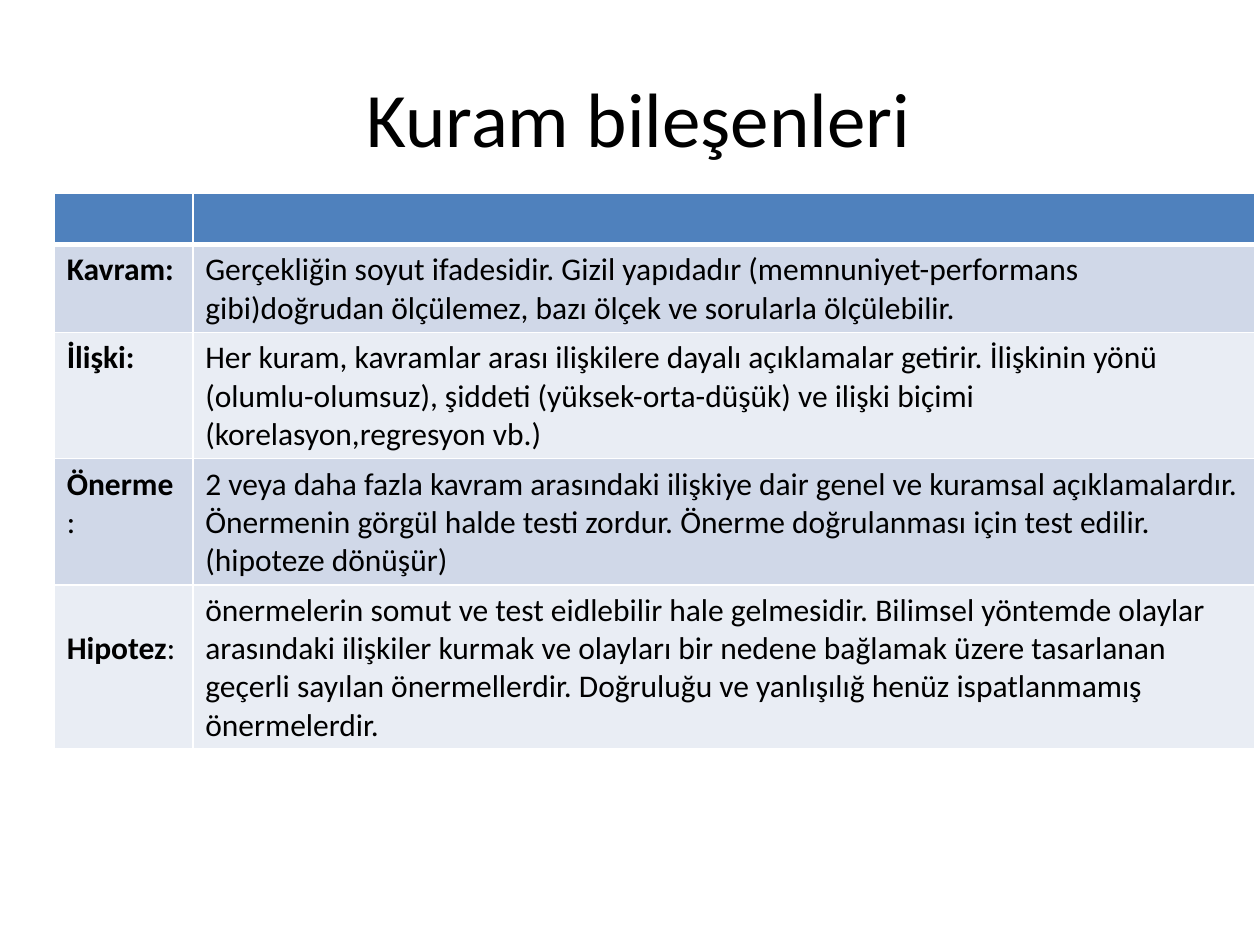
from lxml import etree
from pptx import Presentation
from pptx import util as u
from pptx.dml.color import RGBColor
from pptx.enum import text
from pptx.oxml.ns import qn

FONT = "Calibri"
BLACK, WHITE, HEADER = "000000", "FFFFFF", "4F81BD"
BANDS = ["D0D8E8", "E9EDF4"]
COLUMNS = [1.1, 8.43]
ROW_HEIGHT = 0.41
TERMS = [
    ([("Kavram:", True)],
     "Gerçekliğin soyut ifadesidir. Gizil yapıdadır (memnuniyet-performans "
     "gibi)doğrudan ölçülemez, bazı ölçek ve sorularla ölçülebilir."),
    ([("İlişki:", True)],
     "Her kuram, kavramlar arası ilişkilere dayalı açıklamalar getirir. İlişkinin yönü "
     "(olumlu-olumsuz), şiddeti (yüksek-orta-düşük) ve ilişki biçimi "
     "(korelasyon,regresyon vb.)"),
    ([("Önerme", True), (":", False)],
     "2 veya daha fazla kavram arasındaki ilişkiye dair genel ve kuramsal açıklamalardır. "
     "Önermenin görgül halde testi zordur. Önerme doğrulanması için test edilir. "
     "(hipoteze dönüşür)"),
    ([(" ", False), ("Hipotez", True), (":", False)],
     "önermelerin somut ve test eidlebilir hale gelmesidir. Bilimsel yöntemde olaylar "
     "arasındaki ilişkiler kurmak ve olayları bir nedene bağlamak üzere tasarlanan "
     "geçerli sayılan önermellerdir. Doğruluğu ve yanlışılığ henüz ispatlanmamış "
     "önermelerdir."),
]


def rgb(value):
    """Turn a hex string into a colour."""
    return RGBColor.from_string(value)


def add_runs(p, runs, size):
    """Add (wording, bold) runs to a paragraph."""
    for wording, bold in runs:
        r = p.add_run()
        r.text = wording
        r.font.name = FONT
        r.font.size = u.Pt(size)
        r.font.bold = bold
        r.font.color.rgb = rgb(BLACK)


def style_cell(cell, fill, bottom=1):
    """Give a cell white borders and a solid fill."""
    tcPr = cell._tc.get_or_add_tcPr()
    for side, width in (("L", 1), ("R", 1), ("T", 1), ("B", bottom)):
        ln = etree.SubElement(tcPr, qn(f"a:ln{side}"), w=str(u.Pt(width)))
        solid = etree.SubElement(ln, qn("a:solidFill"))
        etree.SubElement(solid, qn("a:srgbClr"), val=WHITE)
    cell.fill.solid()
    cell.fill.fore_color.rgb = rgb(fill)


def add_title(s, left, top, width, height):
    """Place the centred slide title."""
    box = s.shapes.add_textbox(*map(u.Inches, (left, top, width, height)))
    tf = box.text_frame
    tf.word_wrap = True
    tf.vertical_anchor = text.MSO_ANCHOR.MIDDLE
    p = tf.paragraphs[0]
    p.alignment = text.PP_ALIGN.CENTER
    add_runs(p, [(" Kuram bileşenleri", False)], 44)


def add_terms(s, left, top):
    """Place the table of theory components."""
    count = len(TERMS) + 1
    size = (sum(COLUMNS), ROW_HEIGHT * count)
    table = s.shapes.add_table(
        count, len(COLUMNS), *map(u.Inches, (left, top, *size))).table
    for column, width in zip(table.columns, COLUMNS):
        column.width = u.Inches(width)
    for cell in table.rows[0].cells:
        style_cell(cell, HEADER, bottom=3)
    for i, (term, meaning) in enumerate(TERMS):
        cells = table.rows[i + 1].cells
        for cell, runs in zip(cells, (term, [(meaning, False)])):
            style_cell(cell, BANDS[i % 2])
            add_runs(cell.text_frame.paragraphs[0], runs, 18)


def main():
    """Build the slide and save it."""
    prs = Presentation()
    prs.slide_width, prs.slide_height = u.Inches(10), u.Inches(7.5)
    s = prs.slides.add_slide(prs.slide_layouts[6])
    add_title(s, 0.5, 0.3, 9, 1.25)
    add_terms(s, 0.43, 1.53)
    prs.save("out.pptx")


if __name__ == "__main__":
    main()
